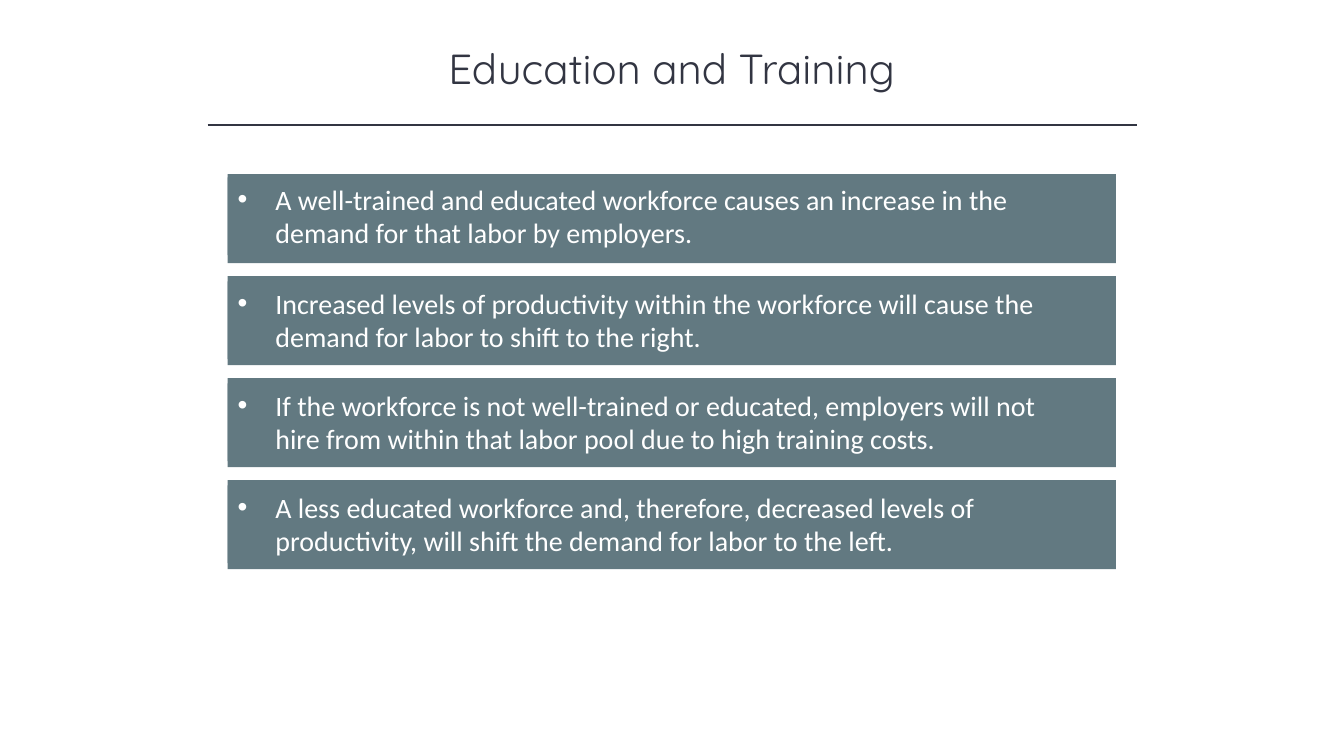
"""Build the Education and Training slide with four bulleted bands."""
from lxml.etree import SubElement
from pptx import Presentation
from pptx.dml.color import RGBColor
from pptx.enum.shapes import MSO_CONNECTOR as Connector, MSO_SHAPE as Shape
from pptx.enum.text import MSO_ANCHOR as Anchor, MSO_AUTO_SIZE as AutoSize, PP_ALIGN as Align
from pptx.oxml.ns import qn
from pptx.util import Cm, Pt

INK, SLATE, WHITE = "323542", "627981", "FFFFFF"
POINTS = [
    "A well-trained and educated workforce causes an increase in the demand for that labor by employers.",
    "Increased levels of productivity within the workforce will cause the demand for labor to shift to the right.",
    "If the workforce is not well-trained or educated, employers will not hire from within that labor pool "
    "due to high training costs.",
    "A less educated workforce and, therefore, decreased levels of productivity, will shift the demand for "
    "labor to the left.",
]
BAND_LEFT, BAND_TOP, BAND_PITCH = 5.74, 4.39, 2.57


def style_text(frame, text, size, font, color, align):
    frame.text = text
    frame.word_wrap = True
    frame.auto_size = AutoSize.SHAPE_TO_FIT_TEXT
    frame.vertical_anchor = Anchor.TOP
    para = frame.paragraphs[0]
    para.alignment = align
    span = para.runs[0]
    span.font.size = Pt(size)
    span.font.name = font
    span.font.color.rgb = RGBColor.from_string(color)
    return para


def add_box(group, top, width, height):
    box = group.shapes.add_shape(Shape.RECTANGLE, Cm(BAND_LEFT), Cm(top), Cm(width), Cm(height))
    box.shadow.inherit = False
    box.fill.solid()
    box.fill.fore_color.rgb = RGBColor.from_string(SLATE)
    box.line.fill.background()
    return box


deck = Presentation()
deck.slide_width, deck.slide_height = Cm(33.87), Cm(19.05)
page = deck.slides.add_slide(deck.slide_layouts[5])
for holder in list(page.placeholders):
    if holder != page.shapes.title:
        holder.element.getparent().remove(holder.element)

title = page.shapes.title
title.left, title.top, title.width, title.height = Cm(4.23), Cm(0.94), Cm(25.4), Cm(1.55)
style_text(title.text_frame, "Education and Training", 30, "Quicksand", INK, Align.CENTER)

rule = page.shapes.add_connector(Connector.STRAIGHT, Cm(5.23), Cm(3.15), Cm(28.65), Cm(3.15))
rule.line.color.rgb = RGBColor.from_string(INK)
rule.line.width = Pt(1)
SubElement(rule.element.spPr, qn("a:effectLst"))

for index, point in enumerate(POINTS):
    top = BAND_TOP + index * BAND_PITCH
    group = page.shapes.add_group_shape()
    add_box(group, top, 22.38, 2.24)
    label = add_box(group, top + (0.13 if index else 0.08), 21.69, 1.96)
    para = style_text(label.text_frame, point, 20, "Calibri", WHITE, Align.LEFT)
    settings = para.runs[0].font._element.getparent().getparent().get_or_add_pPr()
    settings.set("marL", str(Cm(0.95)))
    settings.set("indent", str(-Cm(0.95)))
    SubElement(settings, qn("a:buFont"), typeface="Arial")
    SubElement(settings, qn("a:buChar"), char="•")

deck.save("out.pptx")
